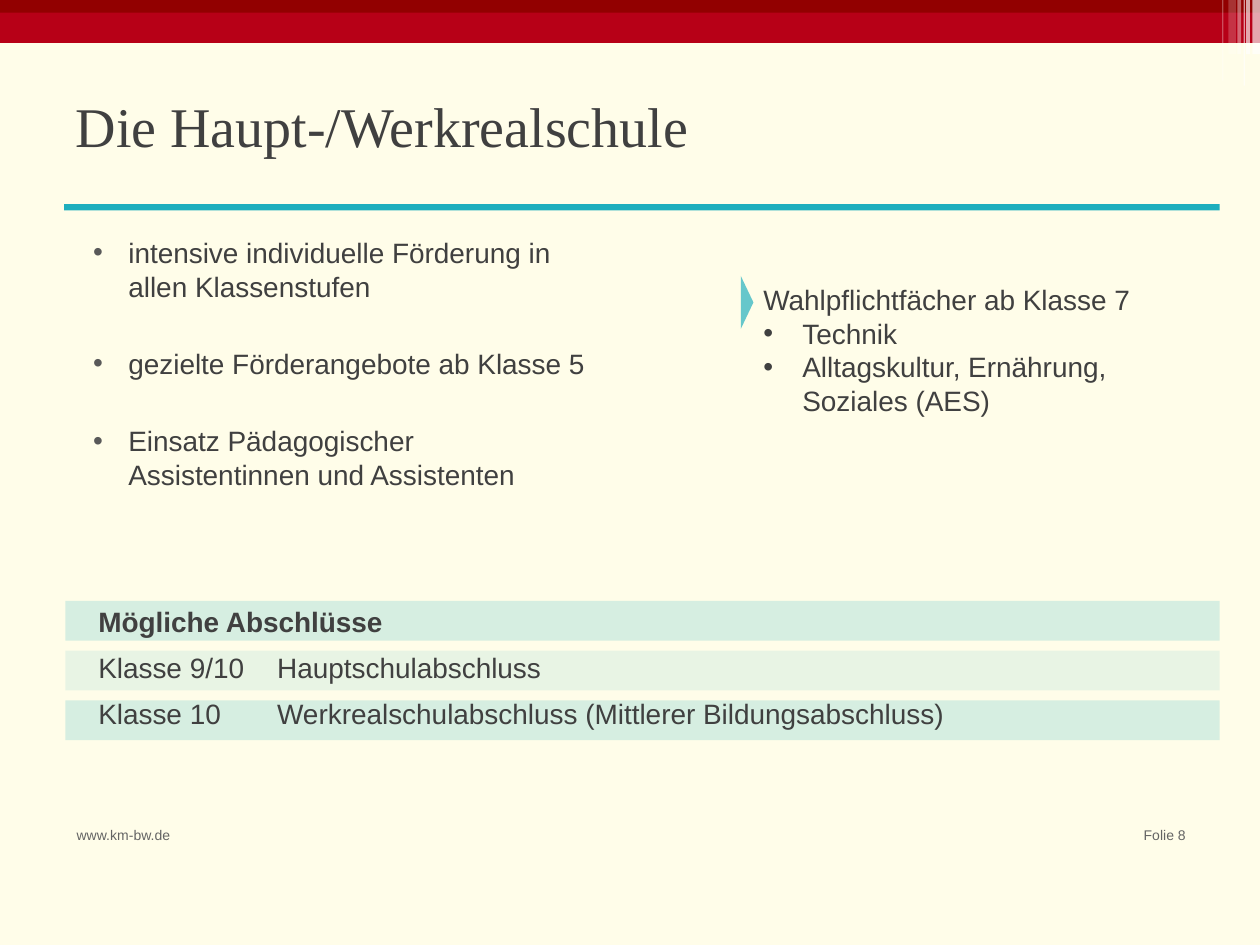
from lxml.etree import SubElement
from pptx import Presentation
from pptx.dml.color import RGBColor
from pptx.enum.shapes import MSO_SHAPE as Shape
from pptx.enum.text import MSO_ANCHOR as Anchor, PP_ALIGN as Align
from pptx.oxml.ns import qn
from pptx.util import Emu, Inches, Pt

# The slide is a grid of 100 columns and 75 rows of square units
UNIT = Inches(0.1)
COLUMNS, ROWS = 100, 75
TEXT, BULLET, FOOTER = "404040", "595959", "646464"
TEAL, WHITE = "1EAEBD", "FFFFFF"
NO_STYLE = "{2D5ABB26-0587-4C30-8999-92F81FD0307C}"

# Thin vertical stripes in the top corner: left, width, height, opacity
CORNER_STRIPES = [
    (98.9, 0.3, 4.3, 65), (99.4, 0.6, 4.3, 65), (97, 0.1, 6.4, 30),
    (98.7, 0.1, 6.8, 60), (97.5, 0.6, 4.3, 20), (98.2, 0.3, 4.3, 40),
]
SUPPORT = [
    "intensive individuelle Förderung in allen Klassenstufen",
    "gezielte Förderangebote ab Klasse 5",
    "Einsatz Pädagogischer Assistentinnen und Assistenten",
]
ELECTIVES = ["Technik", "Alltagskultur, Ernährung, Soziales (AES)"]
DEGREES = [
    ("Mögliche Abschlüsse", ""),
    ("Klasse 9/10", "Hauptschulabschluss"),
    ("Klasse 10", "Werkrealschulabschluss (Mittlerer Bildungsabschluss)"),
]


def grid(*units):
    return [Emu(round(unit * UNIT)) for unit in units]


def color(hex_string):
    return RGBColor.from_string(hex_string)


def add_filled(slide, box, fill, opacity=100, kind=Shape.RECTANGLE):
    shape = slide.shapes.add_shape(kind, *grid(*box))
    shape.shadow.inherit = False
    shape.fill.solid()
    shape.fill.fore_color.rgb = color(fill)
    shape.line.fill.background()
    if opacity < 100:
        value = shape.fill._xPr.find(".//" + qn("a:srgbClr"))
        SubElement(value, qn("a:alpha"), val=str(opacity * 1000))
    return shape


def add_bullet(paragraph, indent, hanging, bullet_color):
    properties = paragraph._p.get_or_add_pPr()
    properties.set("marL", str(Inches(indent)))
    properties.set("indent", str(-Inches(hanging)))
    tint = SubElement(properties, qn("a:buClr"))
    SubElement(tint, qn("a:srgbClr"), val=bullet_color)
    SubElement(properties, qn("a:buFont"), typeface="Arial")
    SubElement(properties, qn("a:buChar"), char="•")


def write(frame, text, size=16, font="Arial", fill=TEXT, bold=False,
          align=Align.LEFT, before=0, bullet=None):
    """Fill the empty first paragraph of a frame, or append a new one."""
    first = frame.paragraphs[0]
    paragraph = frame.add_paragraph() if first.runs else first
    if bullet:
        add_bullet(paragraph, *bullet)
    paragraph.alignment = align
    paragraph.space_before = Pt(before)
    run = paragraph.add_run()
    run.text = text
    run.font.size, run.font.name, run.font.bold = Pt(size), font, bold
    run.font.color.rgb = color(fill)


def add_frame(slide, box, anchor=Anchor.TOP, right=0.1):
    frame = slide.shapes.add_textbox(*grid(*box)).text_frame
    frame.word_wrap = True
    frame.vertical_anchor = anchor
    frame.margin_right = Inches(right)
    return frame


def add_title(slide, text):
    title = slide.shapes.title
    title.left, title.top, title.width, title.height = grid(5, 6.1, 90, 7.7)
    title.text_frame.vertical_anchor = Anchor.MIDDLE
    write(title.text_frame, text, size=32, font="Times New Roman")


def add_degree_table(slide):
    box = grid(6.8, 47.7, 85, 10.5)
    table = slide.shapes.add_table(len(DEGREES), 2, *box).table
    table.first_row = table.horz_banding = False
    table._tbl.tblPr.find(qn("a:tableStyleId")).text = NO_STYLE
    for column, width in zip(table.columns, grid(14.2, 70.8)):
        column.width = width
    table.cell(0, 0).merge(table.cell(0, 1))
    for row, texts in enumerate(DEGREES):
        for column, text in enumerate(texts):
            cell = table.cell(row, column)
            cell.fill.background()
            if text:
                write(cell.text_frame, text, bold=row == 0)


def main():
    presentation = Presentation()
    presentation.slide_width, presentation.slide_height = grid(COLUMNS, ROWS)
    slide = presentation.slides.add_slide(presentation.slide_layouts[5])
    slide.background.fill.solid()
    slide.background.fill.fore_color.rgb = color("FFFDE9")

    # Red header with corner stripes
    add_filled(slide, (0, 0, COLUMNS, 3.4), "B70017")
    add_filled(slide, (0, 0, COLUMNS, 1), "920000")
    for left, width, height, opacity in CORNER_STRIPES:
        add_filled(slide, (left, 0, width, height), WHITE, opacity)

    # Title and rule
    add_title(slide, "Die Haupt-/Werkrealschule")
    add_filled(slide, (5.1, 16.2, 91.7, 0.5), TEAL)

    # Support offers on the left
    support = add_frame(slide, (5.2, 18.2, 47.2, 26.8), right=0.59)
    for index, text in enumerate(SUPPORT):
        write(support, text, before=25 if index else 0,
              bullet=(0.4, 0.28, BULLET))

    # Elective subjects on the right, with marker
    electives = add_frame(slide, (59.6, 19.5, 32.5, 16.5), Anchor.MIDDLE)
    write(electives, "Wahlpflichtfächer ab Klasse 7")
    for text in ELECTIVES:
        write(electives, text, bullet=(0.31, 0.31, TEXT))
    marker = add_filled(slide, (58.8, 21.9, 1, 4.2), TEAL, 68, Shape.PENTAGON)
    marker.adjustments[0] = 1

    # Degrees on alternating bands
    for row in range(len(DEGREES)):
        add_filled(slide, (5.2, 47.7 + 3.95 * row, 91.6, 3.15), TEAL,
                   10 if row % 2 else 18)
    add_degree_table(slide)

    # Footer
    write(add_frame(slide, (5.1, 65.1, 10, 3.9)), "www.km-bw.de",
          size=8, fill=FOOTER)
    write(add_frame(slide, (85.4, 65.1, 9.7, 3.9)), "Folie 8",
          size=8, fill=FOOTER, align=Align.RIGHT)
    presentation.save("out.pptx")


if __name__ == "__main__":
    main()
